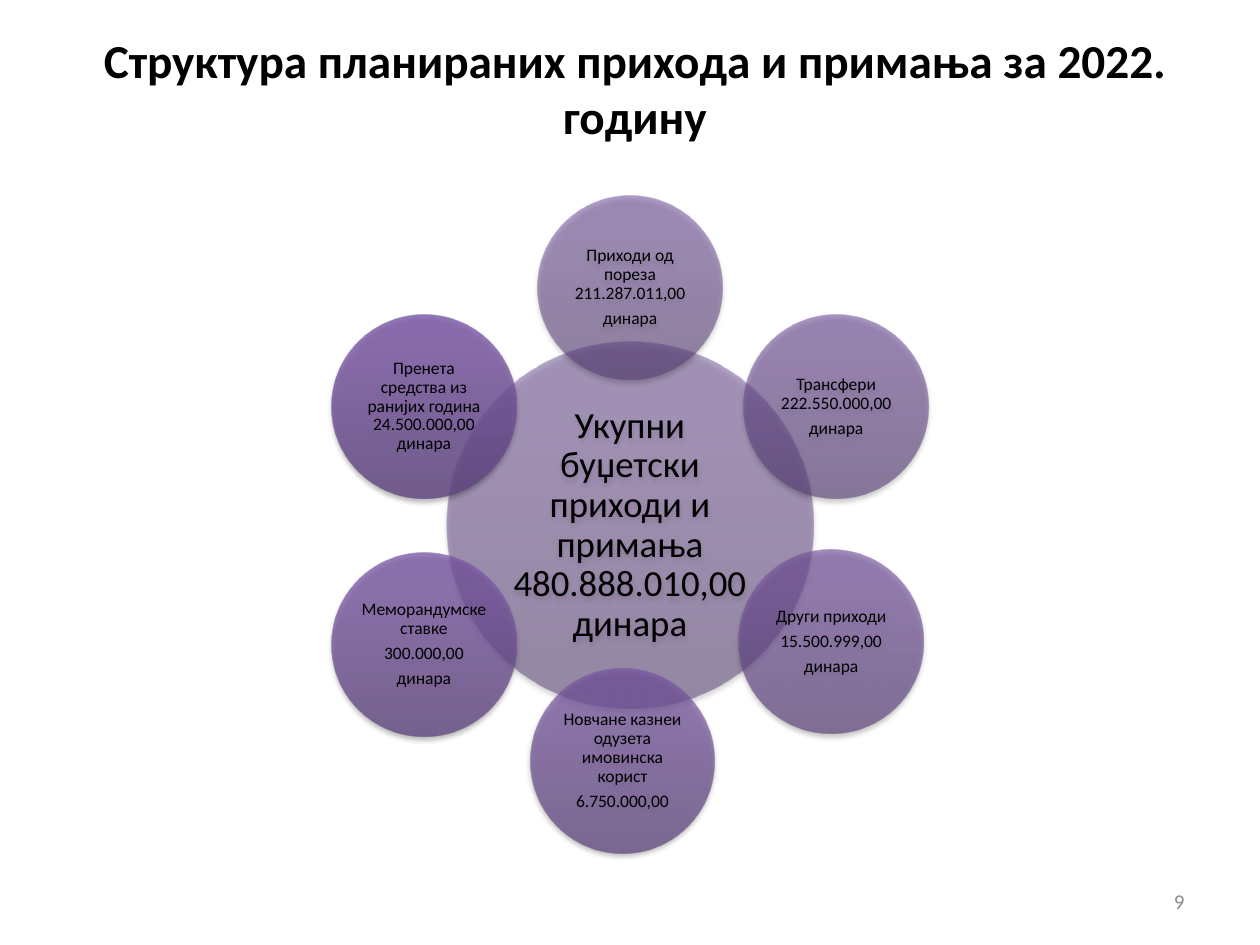
import math
from dataclasses import dataclass

from pptx import Presentation
from pptx.dml.color import RGBColor
from pptx.enum import shapes, text
from pptx.oxml import parse_xml
from pptx.oxml.ns import nsdecls
from pptx.util import Inches, Pt


@dataclass(frozen=True)
class Theme:
    font: str = "Calibri"
    ink: str = "000000"
    muted: str = "8C8C8C"
    title_size: int = 27
    total_size: int = 21
    source_size: int = 10
    number_size: int = 12
    # Gradient position -> colour of the total and of the last source
    gradient = {0: ("563D74", "5F4580"), 80: ("705097", "7C59A6"), 100: ("704F99", "7C58A8")}
    opacity: tuple = (50, 80)


THEME = Theme()
TITLE = "Структура планираних прихода и примања за 2022. годину"
TOTAL = ["Укупни буџетски приходи и примања 480.888.010,00 динара"]
# Paragraphs of each source, clockwise from the top, and its offset from the ring
SOURCES = [
    (["Приходи од пореза 211.287.011,00", "динара"], (0, 0)),
    (["Трансфери 222.550.000,00", "динара"], (0, 0)),
    (["Други приходи", "15.500.999,00", "динара"], (-0.04, -0.02)),
    (["Новчане казнеи одузета имовинска корист", "6.750.000,00"], (-0.06, -0.02)),
    (["Mеморандумске ставке", "300.000,00", "динара"], (0, 0)),
    (["Пренета средства из ранијих година 24.500.000,00 динара"], (0, 0)),
]


def write(frame, lines, size, color=THEME.ink, bold=False, inset=0.1, **layout):
    frame_format = {"word_wrap": True, "auto_size": text.MSO_AUTO_SIZE.NONE,
                    "vertical_anchor": text.MSO_ANCHOR.MIDDLE}
    for side in ("left", "right", "top", "bottom"):
        frame_format[f"margin_{side}"] = Inches(inset if side in ("left", "right") else min(inset, 0.05))
    for name, value in frame_format.items():
        setattr(frame, name, value)
    para_format = {"alignment": text.PP_ALIGN.CENTER, **layout}
    font_format = {"name": THEME.font, "size": Pt(size), "bold": bold}
    for index, line in enumerate(lines):
        para = frame.paragraphs[0] if index == 0 else frame.add_paragraph()
        for name, value in para_format.items():
            setattr(para, name, value)
        span = para.add_run()
        span.text = line
        for name, value in font_format.items():
            setattr(span.font, name, value)
        span.font.color.rgb = RGBColor.from_string(color)


def blend(first, last, share):
    pairs = zip(bytes.fromhex(first), bytes.fromhex(last))
    return bytes(round(a + (b - a) * share) for a, b in pairs).hex().upper()


def paint(shape, share):
    """Give a circle its translucent gradient and soft shadow; share runs from 0 to 1."""
    low, high = THEME.opacity
    alpha = round((low + (high - low) * share) * 1000)
    stops = "".join(
        f'<a:gs pos="{place * 1000}"><a:srgbClr val="{blend(*ends, share)}">'
        f'<a:alpha val="{alpha}"/></a:srgbClr></a:gs>'
        for place, ends in THEME.gradient.items())
    shape.line.fill.background()
    shape.shadow.inherit = False
    properties = shape._element.spPr
    properties.insert(2, parse_xml(
        f'<a:gradFill {nsdecls("a")} rotWithShape="1"><a:gsLst>{stops}</a:gsLst>'
        '<a:lin ang="16200000" scaled="0"/></a:gradFill>'))
    properties[-1].append(parse_xml(
        f'<a:outerShdw {nsdecls("a")} blurRad="{Pt(3.1)}" dist="{Pt(1.8)}" dir="5400000" '
        f'rotWithShape="0"><a:srgbClr val="{THEME.ink}"><a:alpha val="35000"/>'
        '</a:srgbClr></a:outerShdw>'))


def add_circle(page, center, diameter, lines, size, share, inset):
    left, top = (Inches(place - diameter / 2) for place in center)
    circle = page.shapes.add_shape(shapes.MSO_SHAPE.OVAL, left, top,
                                   Inches(diameter), Inches(diameter))
    paint(circle, share)
    write(circle.text_frame, lines, size, inset=inset,
          line_spacing=0.9, space_after=Pt(size * 0.35))


def add_title(page, left, top, width, height):
    title = page.shapes.title
    box = {"left": left, "top": top, "width": width, "height": height}
    for name, value in box.items():
        setattr(title, name, Inches(value))
    write(title.text_frame, [TITLE], THEME.title_size, bold=True)


def add_radial_diagram(page, left, top, width, height):
    """Place the total in the middle of the box and the sources on a ring around it."""
    total, source = height * 0.556, height * 0.279
    radius = (height - source) / 2
    middle = left + width / 2, top + height / 2
    add_circle(page, middle, total, TOTAL, THEME.total_size, 0, 0.03)
    for index, (lines, nudge) in enumerate(SOURCES):
        angle = math.tau * index / len(SOURCES)
        center = (middle[0] + radius * math.sin(angle) + nudge[0],
                  middle[1] - radius * math.cos(angle) + nudge[1])
        add_circle(page, center, source, lines, THEME.source_size,
                   (index + 1) / len(SOURCES), 0.01)


def add_page_number(page, left, top, width, height):
    box = page.shapes.add_textbox(*map(Inches, (left, top, width, height)))
    write(box.text_frame, ["9"], THEME.number_size, THEME.muted,
          alignment=text.PP_ALIGN.RIGHT)


def main():
    deck = Presentation()
    deck.slide_width, deck.slide_height = Inches(10), Inches(7.5)
    page = deck.slides.add_slide(deck.slide_layouts[5])
    add_title(page, 0.54, 0.27, 9, 0.85)
    add_radial_diagram(page, 2.63, 1.55, 4.74, 5.24)
    add_page_number(page, 7.17, 6.95, 2.33, 0.4)
    deck.save("out.pptx")


if __name__ == "__main__":
    main()
